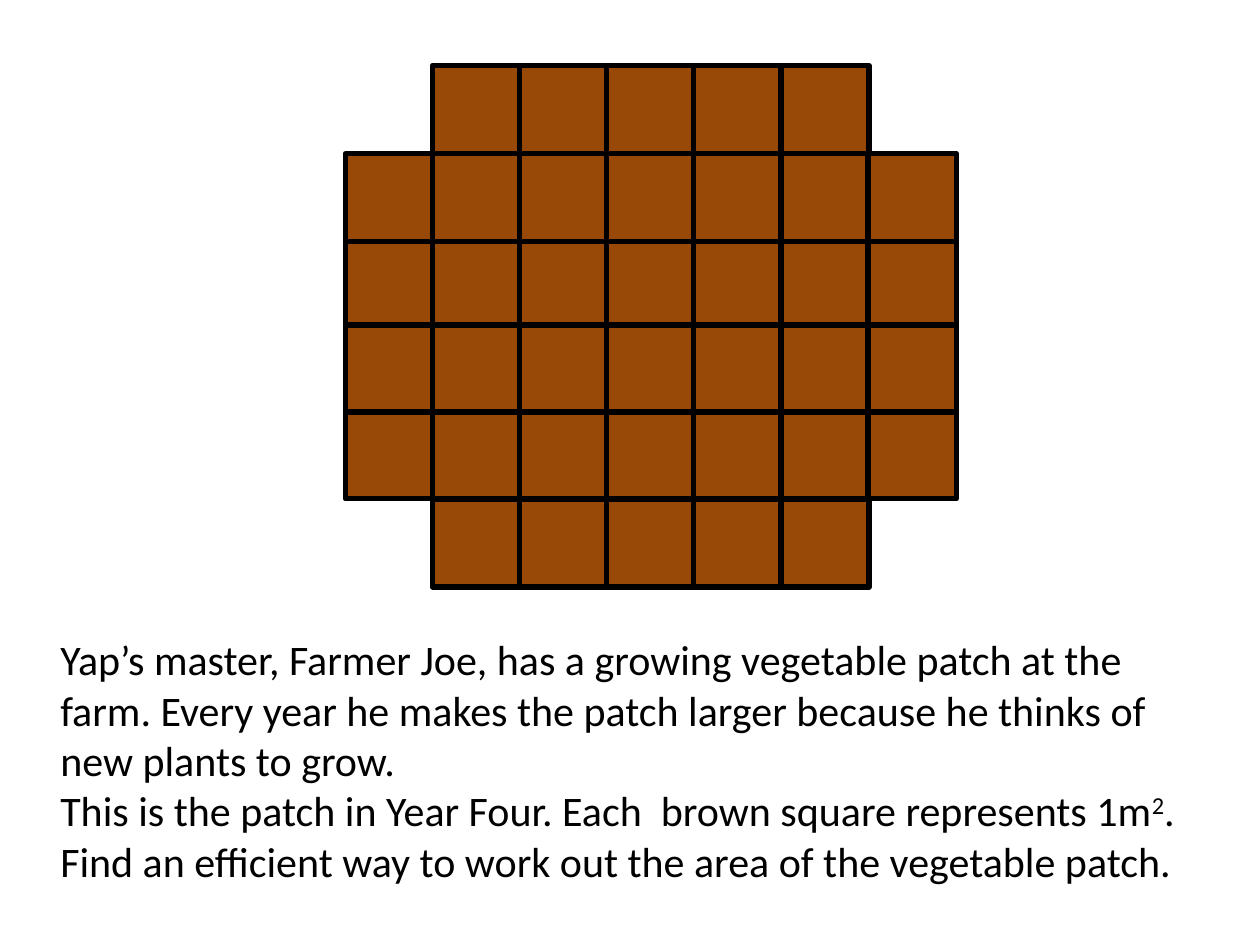
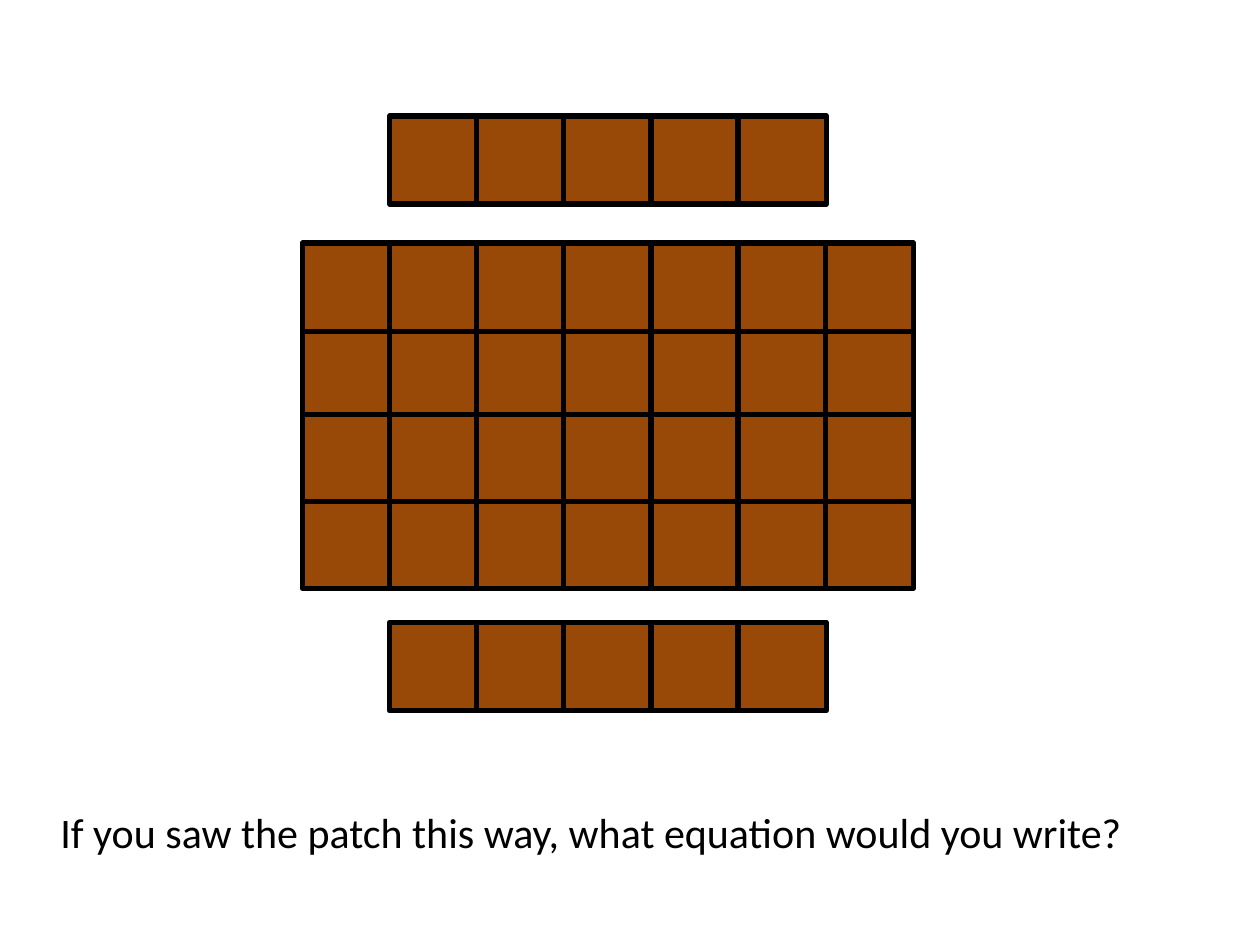
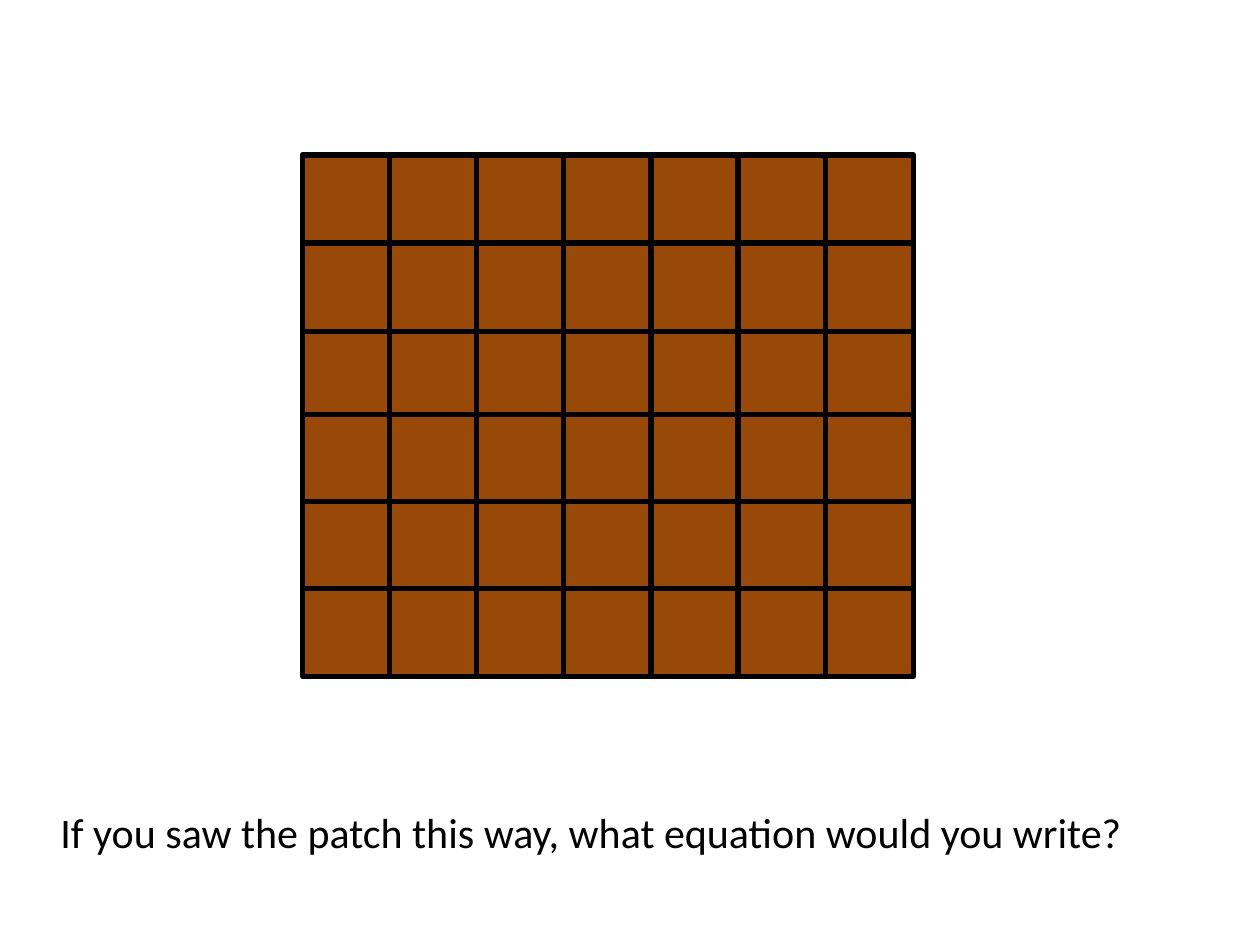
from pptx import Presentation
from pptx.dml.color import RGBColor
from pptx.enum.shapes import MSO_SHAPE
from pptx.enum.text import MSO_AUTO_SIZE
from pptx.util import Inches, Pt

SQUARE = MSO_SHAPE.RECTANGLE
FIT_TEXT = MSO_AUTO_SIZE.SHAPE_TO_FIT_TEXT

COLORS = {"soil": "984807", "ink": "000000"}
FONT = "Calibri"
BLANK_LAYOUT = 6
SIDE = 0.7
COLUMNS = 7
COLUMN_PITCH = 4.15 / (COLUMNS - 1)
MIDDLE_ROW_OFFSETS = (2.04, 1.35, 0.66, 0)

STORY = (
    (("Yap’s master, Farmer Joe, has a growing vegetable patch at the farm. "
      "Every year he makes the patch larger because he thinks of new plants to grow.", False),),
    (("This is the patch in Year Four. Each  brown square represents 1m", False),
     ("2", True), (".", False)),
    (("Find an efficient way to work out the area of the vegetable patch.", False),),
)
QUESTION = ((("If you saw the patch this way, what equation would you write?", False),),)


def color(key):
    """Return the named colour of the deck."""
    return RGBColor.from_string(COLORS[key])


def add_square(patch, left, top):
    """Add one square metre of soil to the patch."""
    square = patch.shapes.add_shape(SQUARE, Inches(left), Inches(top), Inches(SIDE), Inches(SIDE))
    square.shadow.inherit = False
    square.fill.solid()
    square.fill.fore_color.rgb = color("soil")
    square.line.color.rgb = color("ink")
    square.line.width = Pt(3)


def add_row(patch, patch_left, top, columns):
    """Add a row of squares in the given columns."""
    for column in columns:
        add_square(patch, patch_left + column * COLUMN_PITCH, top)


def add_patch(slide, left, middle_top, end_tops, end_columns):
    """Add the four full middle rows and the two end rows of a patch."""
    patch = slide.shapes.add_group_shape()
    for offset in MIDDLE_ROW_OFFSETS:
        add_row(patch, left, middle_top + offset, range(COLUMNS))
    for end_top in end_tops:
        add_row(patch, left, end_top, end_columns)


def add_text(slide, top, height, paragraphs):
    """Add paragraphs made of (text, is superscript) parts below the patch."""
    frame = slide.shapes.add_textbox(Inches(0.38), Inches(top), Inches(9.29), Inches(height)).text_frame
    frame.word_wrap = True
    frame.auto_size = FIT_TEXT
    for index, parts in enumerate(paragraphs):
        paragraph = frame.add_paragraph() if index else frame.paragraphs[0]
        paragraph.font.name = FONT
        paragraph.font.size = Pt(24)
        paragraph.font.color.rgb = color("ink")
        for text, is_superscript in parts:
            run = paragraph.add_run()
            run.text = text
            if is_superscript:
                run.font._element.set("baseline", "30000")


def main():
    """Build the three views of the vegetable patch."""
    deck = Presentation()
    deck.slide_width, deck.slide_height = Inches(10), Inches(7.5)
    inner_columns = range(1, COLUMNS - 1)
    views = (
        (2.74, 1.22, (0.52, 3.96), inner_columns, 4.98, 2.12, STORY),
        (2.4, 1.93, (0.92, 4.94), inner_columns, 6.35, 0.5, QUESTION),
        (2.4, 1.93, (1.23, 4.67), range(COLUMNS), 6.35, 0.5, QUESTION),
    )
    for left, middle_top, end_tops, end_columns, text_top, text_height, paragraphs in views:
        slide = deck.slides.add_slide(deck.slide_layouts[BLANK_LAYOUT])
        add_patch(slide, left, middle_top, end_tops, end_columns)
        add_text(slide, text_top, text_height, paragraphs)
    deck.save("out.pptx")


if __name__ == "__main__":
    main()
